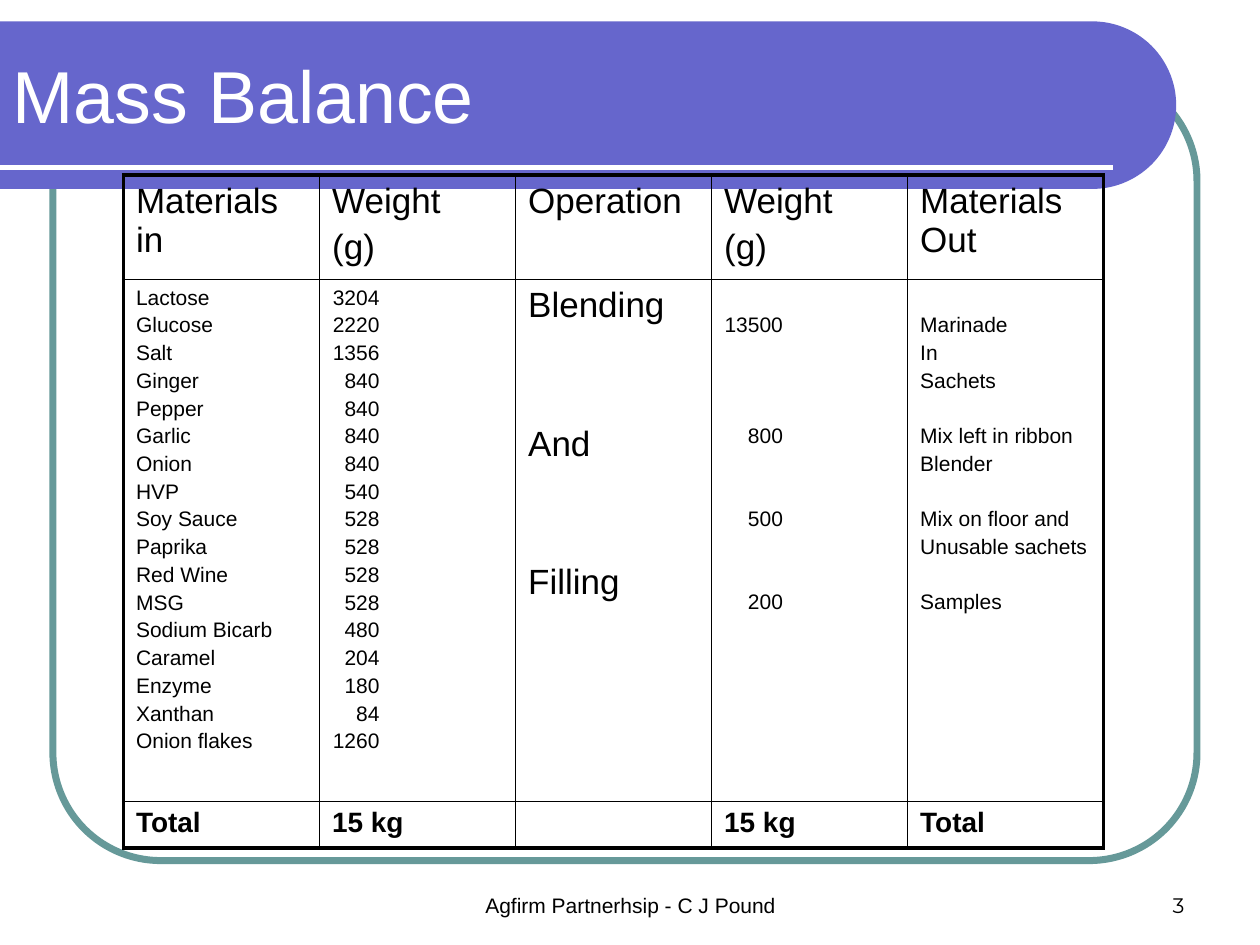
"""Build the Mass Balance slide with its table of materials and weights."""
import math
from lxml import etree
from pptx import Presentation, util as u
from pptx.dml.color import RGBColor
from pptx.enum import shapes, text
from pptx.oxml import ns

inch = u.Inches
left, mid, right = text.PP_ALIGN.LEFT, text.PP_ALIGN.CENTER, text.PP_ALIGN.RIGHT


def tint(code):
    return RGBColor.from_string(code)


def style(para, size, color="000000", face="Arial", align=left, bold=False):
    para.alignment = align
    para.font.size = u.Pt(size)
    para.font.name = face
    para.font.bold = bold
    para.font.color.rgb = tint(color)


deck = Presentation()
deck.slide_width, deck.slide_height = inch(10), inch(7.5)
slide = deck.slides.add_slide(deck.slide_layouts[6])
items = slide.shapes

frame = items.add_shape(shapes.MSO_SHAPE.ROUNDED_RECTANGLE,
                        inch(0.42), inch(0.58), inch(9.08), inch(6.25))
frame.adjustments[0] = 0.137
frame.shadow.inherit = False
frame.fill.background()
frame.line.color.rgb = tint("669999")
frame.line.width = u.Pt(4)

radius, hub = 0.665, 8.67
arc = []
for step in range(61):
    turn = math.pi * (step / 60 - 0.5)
    arc.append((inch(hub + radius * math.cos(turn)),
                inch(0.17 + radius + radius * math.sin(turn))))
pen = items.build_freeform(0, inch(0.17))
pen.add_line_segments(arc + [(0, inch(1.5))], close=True)
band = pen.convert_to_shape()
band.shadow.inherit = False
band.fill.solid()
band.fill.fore_color.rgb = tint("6666CC")
band.line.fill.background()

rule = items.add_connector(shapes.MSO_CONNECTOR.STRAIGHT,
                           0, inch(1.33), inch(8.83), inch(1.33))
rule.line.color.rgb = tint("FFFFFF")
rule.line.width = u.Pt(3)
etree.SubElement(rule._element.spPr, ns.qn("a:effectLst"))

low, center = text.MSO_ANCHOR.BOTTOM, text.MSO_ANCHOR.MIDDLE
labels = [
    ("Agfirm Partnerhsip - C J Pound", 3.42, 6.83, 3.17, 0.5, low,
     12, "000000", "Arial", mid),
    ("3", 7.17, 6.83, 2.33, 0.5, low, 12, "000000", "Montserrat", right),
    ("Mass Balance", 0, 0.25, 8.77, 1, center, 42, "FFFFFF", "Arial", left),
]
for words, x, y, wide, high, anchor, *look in labels:
    box = items.add_textbox(inch(x), inch(y), inch(wide), inch(high)).text_frame
    box.word_wrap = True
    box.vertical_anchor = anchor
    box.text = words
    style(box.paragraphs[0], *look)

goods = ["Lactose", "Glucose", "Salt", "Ginger", "Pepper", "Garlic", "Onion",
         "HVP", "Soy Sauce", "Paprika", "Red Wine", "MSG", "Sodium Bicarb",
         "Caramel", "Enzyme", "Xanthan", "Onion flakes"]
loads = ["3204", "2220", "1356", "840", "840", "840", "840", "540", "528",
         "528", "528", "528", "480", "204", "180", "84", "1260"]
steps = ["Blending", "", "", "And", "", "", "Filling"]
yields = ["", "13500", "", "", "", "800", "", "", "500", "", "", "200"]
ends = ["", "Marinade", "In", "Sachets", "", "Mix left in ribbon", "Blender",
        "", "Mix on floor and", "Unusable sachets", "", "Samples"]
rows = [
    [["Materials in"], ["Weight", "(g)"], ["Operation"], ["Weight", "(g)"],
     ["Materials Out"]],
    [goods, loads, steps, yields, ends],
    [["Total"], ["15 kg"], [], ["15 kg"], ["Total"]],
]
sizes = [[20] * 5, [12, 12, 20, 12, 12], [16] * 5]
insets = {1: 1.08, 3: 0.99}
pitch, gap = 1.32, 0.2

grid = items.add_table(3, 5, inch(0.98), inch(1.39), inch(7.78), inch(5.34)).table
grid.first_row = grid.horz_banding = False
for col in grid.columns:
    col.width = inch(7.78 / 5)
for row, high in zip(grid.rows, (0.83, 4.14, 0.37)):
    row.height = inch(high)

for r, row in enumerate(rows):
    for c, lines in enumerate(row):
        cell, size = grid.cell(r, c), sizes[r][c]
        edges = {"lnL": c == 0, "lnR": c == 4, "lnT": r == 0, "lnB": r == 2}
        for tag, outer in edges.items():
            edge = etree.SubElement(cell._tc.get_or_add_tcPr(), ns.qn("a:" + tag),
                                    w=str(u.Pt(2.25 if outer else 1)))
            fill = etree.SubElement(edge, ns.qn("a:solidFill"))
            etree.SubElement(fill, ns.qn("a:srgbClr"), val="000000")
        cell.fill.background()
        if not lines:
            cell.margin_top = cell.margin_bottom = 0
            continue
        number = r == 1 and c in insets
        if number:
            cell.margin_left = 0
            cell.margin_right = inch(insets[c])
        para, blanks = None, 0
        for line in lines:
            if not line:
                blanks += 1
                continue
            if para is None:
                para = cell.text_frame.paragraphs[0]
                cell.margin_top = inch(0.05) + u.Pt(size * pitch * blanks)
            else:
                para = cell.text_frame.add_paragraph()
                para.space_before = u.Pt(size * (gap + pitch * blanks))
            para.text = line
            style(para, size, align=right if number else left, bold=r == 2)
            blanks = 0

deck.save("out.pptx")
